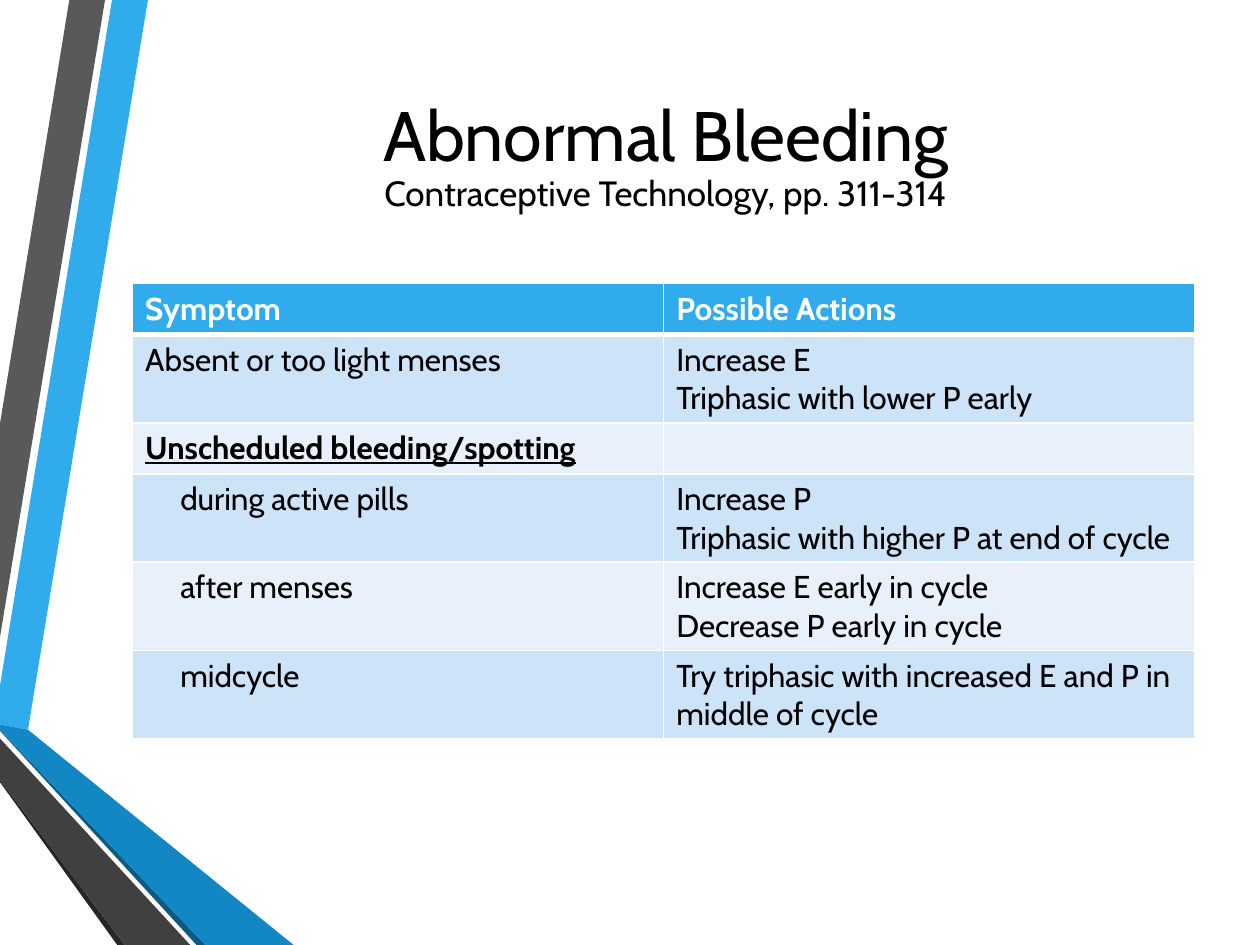
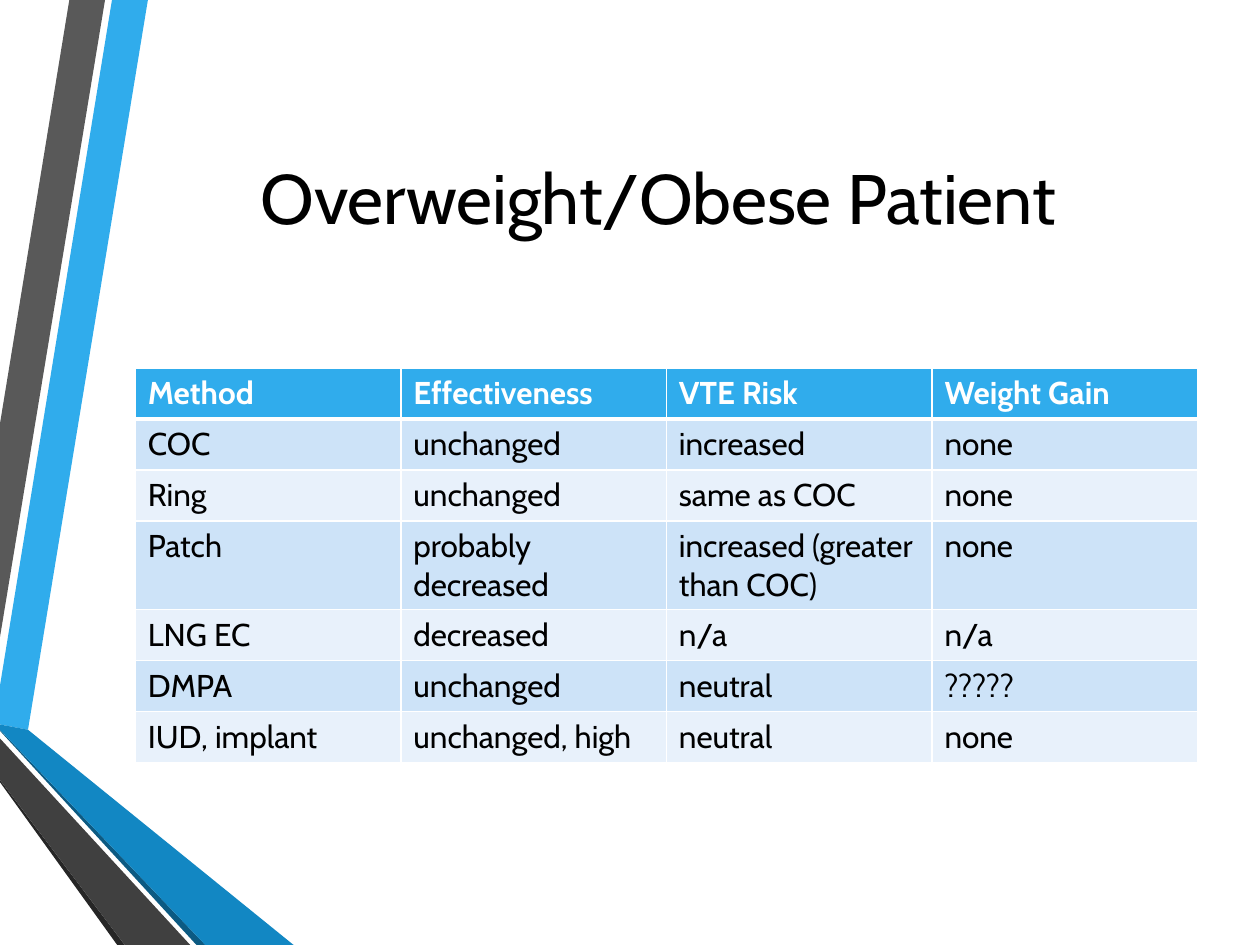
from dataclasses import dataclass

import lxml.etree
import pptx
import pptx.dml.color
import pptx.enum.text
import pptx.oxml.ns
import pptx.util

Pt = pptx.util.Pt
FONT = "Cabin"
BLACK, WHITE, BLUE = "000000", "FFFFFF", "30ACEC"
STRIPES = ("CDE3F8", "E8F1FB")
TABLE_WIDTH = 607
ROW_HEIGHT = 29.2
INDENT = 20


@dataclass(frozen=True)
class Band:
    color: str
    points: tuple[tuple[float, float], ...]


@dataclass(frozen=True)
class Title:
    lines: tuple[tuple[str, float], ...]
    left: float
    height: float


@dataclass(frozen=True)
class Grid:
    left: float
    top: float
    rows: tuple[tuple[str, ...], ...]
    headings: tuple[str, ...] = ()
    indented: tuple[str, ...] = ()


BANDS = (
    Band(BLUE, ((0, 391.7), (0, 414), (16, 417), (84.5, 0), (64, 0))),
    Band("595959", ((60, 0), (39.6, 0), (0, 242), (0, 364))),
    Band("262626", ((0, 445.7), (0, 447), (67, 540), (71.3, 540))),
    Band("0C5A82", ((0, 417), (0, 417.6), (112.3, 540), (117.4, 540))),
    Band("1287C3", ((0, 417), (117.4, 540), (167.8, 540), (16, 417), (0, 414))),
    Band("404040", ((0, 445.7), (71.3, 540), (108.7, 540), (0, 422))),
)

BLEEDING_TITLE = Title(
    (("Abnormal Bleeding", 40), ("Contraceptive Technology, pp. 311-314", 20)), 77, 108
)
BLEEDING = Grid(
    75.8,
    162,
    (
        ("Symptom", "Possible Actions"),
        ("Absent or too light menses", "Increase E\nTriphasic with lower P early"),
        ("Unscheduled bleeding/spotting", ""),
        ("during active pills", "Increase P\nTriphasic with higher P at end of cycle"),
        ("after menses", "Increase E early in cycle\nDecrease P early in cycle"),
        ("midcycle", "Try triphasic with increased E and P in middle of cycle"),
    ),
    headings=("Unscheduled bleeding/spotting",),
    indented=("during active pills", "after menses", "midcycle"),
)

WEIGHT_TITLE = Title((("Overweight/Obese Patient", 40),), 72.5, 159)
WEIGHT = Grid(
    77.3,
    210.2,
    (
        ("Method", "Effectiveness", "VTE Risk", "Weight Gain"),
        ("COC", "unchanged", "increased", "none"),
        ("Ring", "unchanged", "same as COC", "none"),
        ("Patch", "probably decreased", "increased (greater than COC)", "none"),
        ("LNG EC", "decreased", "n/a", "n/a"),
        ("DMPA", "unchanged", "neutral", "?????"),
        ("IUD, implant", "unchanged, high", "neutral", "none"),
    ),
)


def rgb(color: str) -> pptx.dml.color.RGBColor:
    return pptx.dml.color.RGBColor.from_string(color)


def style_run(r, size: float, color: str, bold: bool = False, underline: bool = False) -> None:
    r.font.name = FONT
    r.font.size = Pt(size)
    r.font.color.rgb = rgb(color)
    r.font.bold = bold
    r.font.underline = underline


def draw_band(s, band: Band) -> None:
    start, *rest = [(Pt(x), Pt(y)) for x, y in band.points]
    builder = s.shapes.build_freeform(*start)
    builder.add_line_segments(rest, close=True)
    sp = builder.convert_to_shape()
    sp.shadow.inherit = False
    sp.fill.solid()
    sp.fill.fore_color.rgb = rgb(band.color)
    sp.line.fill.background()


def draw_title(s, title: Title) -> None:
    sp = s.shapes.add_textbox(Pt(title.left), Pt(36), Pt(TABLE_WIDTH), Pt(title.height))
    tf = sp.text_frame
    tf.word_wrap = True
    tf.vertical_anchor = pptx.enum.text.MSO_ANCHOR.MIDDLE
    p = tf.paragraphs[0]
    p.text = "\v".join(text for text, _ in title.lines)
    p.alignment = pptx.enum.text.PP_ALIGN.CENTER
    p.line_spacing = 0.9
    for r, (_, size) in zip(p.runs, title.lines):
        style_run(r, size, BLACK)


def add_border(cell, side: str, width: float) -> None:
    qn = pptx.oxml.ns.qn
    tc_pr = cell._tc.get_or_add_tcPr()
    ln = lxml.etree.SubElement(tc_pr, qn(f"a:ln{side}"), w=str(Pt(width)))
    fill = lxml.etree.SubElement(ln, qn("a:solidFill"))
    lxml.etree.SubElement(fill, qn("a:srgbClr"), val=WHITE)


def draw_cell(cell, text: str, row: int, grid: Grid) -> None:
    header = row == 0
    for side in "LRTB":
        thick = (side == "B" and row == 0) or (side == "T" and row == 1)
        add_border(cell, side, 3 if thick else 1)
    cell.fill.solid()
    cell.fill.fore_color.rgb = rgb(BLUE if header else STRIPES[(row - 1) % 2])
    cell.text_frame.text = text
    heading = text in grid.headings
    for p in cell.text_frame.paragraphs:
        if text in grid.indented:
            p._p.get_or_add_pPr().set("marL", str(Pt(INDENT)))
        for r in p.runs:
            style_run(r, 18, WHITE if header else BLACK, header or heading, heading)


def draw_grid(s, grid: Grid) -> None:
    n_rows, n_cols = len(grid.rows), len(grid.rows[0])
    frame = s.shapes.add_table(
        n_rows, n_cols, Pt(grid.left), Pt(grid.top), Pt(TABLE_WIDTH), Pt(ROW_HEIGHT * n_rows)
    )
    for i, texts in enumerate(grid.rows):
        frame.table.rows[i].height = Pt(ROW_HEIGHT)
        for j, text in enumerate(texts):
            draw_cell(frame.table.cell(i, j), text, i, grid)


def main() -> None:
    prs = pptx.Presentation()
    prs.slide_width, prs.slide_height = Pt(720), Pt(540)
    for title, grid in ((BLEEDING_TITLE, BLEEDING), (WEIGHT_TITLE, WEIGHT)):
        s = prs.slides.add_slide(prs.slide_layouts[6])
        for band in BANDS:
            draw_band(s, band)
        draw_title(s, title)
        draw_grid(s, grid)
    prs.save("out.pptx")


if __name__ == "__main__":
    main()
